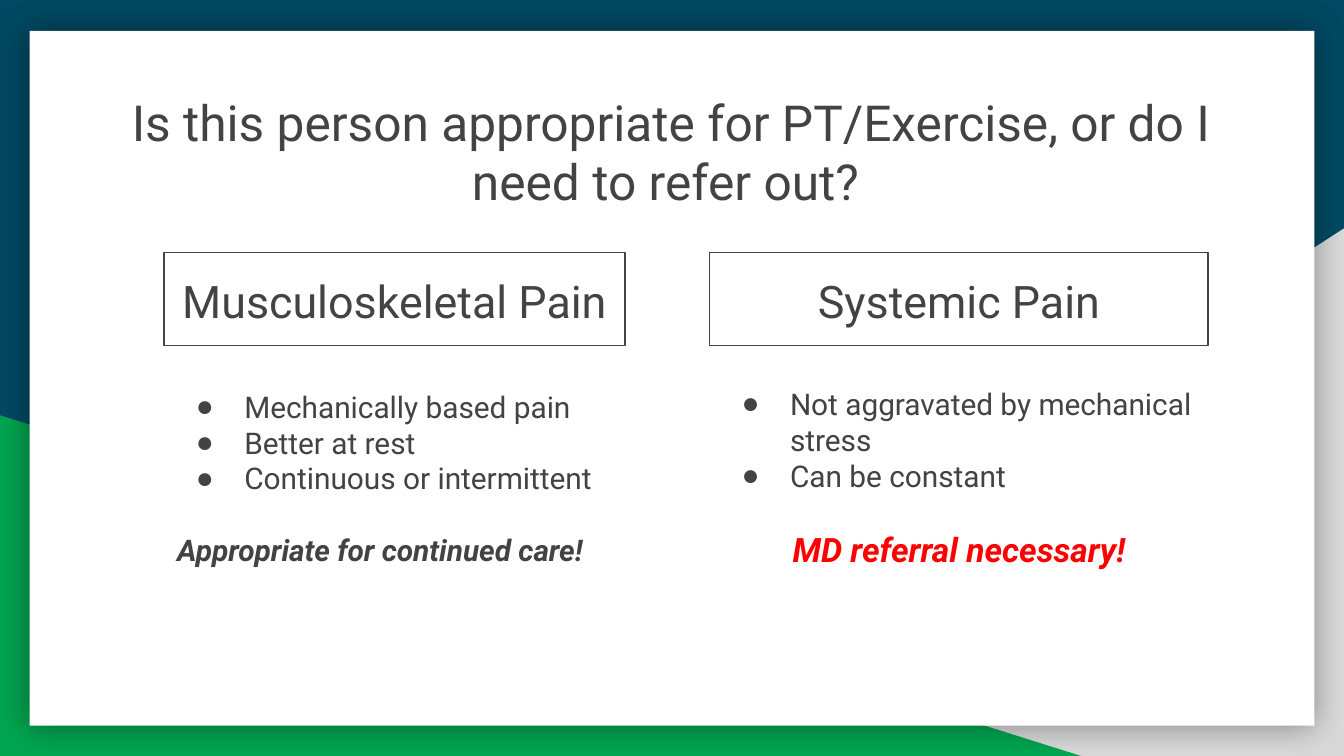
from lxml import etree
from pptx import Presentation
from pptx.dml.color import RGBColor
from pptx.enum.shapes import MSO_SHAPE as Shape
from pptx.enum.text import MSO_ANCHOR as Anchor, PP_ALIGN as Align
from pptx.oxml import parse_xml
from pptx.oxml.ns import nsdecls, qn
from pptx.util import Inches, Pt

NAVY = RGBColor(0x00, 0x49, 0x63)
GREEN = RGBColor(0x00, 0xA5, 0x50)
LIGHT_GRAY = RGBColor(0xD9, 0xD9, 0xD9)
DARK_GRAY = RGBColor(0x43, 0x43, 0x43)
WHITE = RGBColor(0xFF, 0xFF, 0xFF)
RED = RGBColor(0xFF, 0x00, 0x00)

SLIDE_WIDTH = 10
SLIDE_HEIGHT = SLIDE_WIDTH * 9 / 16
HEADER_TOP, HEADER_HEIGHT = 1.88, 0.69
CONCLUSION_GAP = Pt(19)

TITLE = "Is this person appropriate for PT/Exercise, or do I need to refer out? "
BODY = {"size": Pt(16)}
EMPHASIS = {"bold": True, "italic": True}

COLUMNS = [
    {
        "header": "Musculoskeletal Pain",
        "header_box": (1.22, HEADER_TOP, 3.43, HEADER_HEIGHT),
        "list_box": (1.22, 2.79, 3.67, 1.55),
        "points": ["Mechanically based pain", "Better at rest", "Continuous or intermittent"],
        "conclusion": "Appropriate for continued care!",
        "conclusion_align": Align.LEFT,
        "conclusion_font": {**BODY, **EMPHASIS},
        "conclusion_color": DARK_GRAY,
    },
    {
        "header": "Systemic Pain",
        "header_box": (5.28, HEADER_TOP, 3.71, HEADER_HEIGHT),
        "list_box": (5.28, 2.77, 3.71, 1.58),
        "points": ["Not aggravated by mechanical stress", "Can be constant"],
        "conclusion": "MD referral necessary!",
        "conclusion_align": Align.CENTER,
        "conclusion_font": {"size": Pt(18), **EMPHASIS},
        "conclusion_color": RED,
    },
]


def set_attributes(target, values):
    for name, value in values.items():
        setattr(target, name, value)


def add_block(slide, kind, box, fill):
    shape = slide.shapes.add_shape(kind, *map(Inches, box))
    shape.shadow.inherit = False
    shape.fill.solid()
    shape.fill.fore_color.rgb = fill
    shape.line.fill.background()
    return shape


def add_soft_shadow(shape):
    effects = shape._element.spPr.find(qn("a:effectLst"))
    effects.append(parse_xml(
        f'<a:outerShdw {nsdecls("a")} blurRad="{Pt(18)}" dist="0" dir="0" algn="ctr" '
        'rotWithShape="0"><a:srgbClr val="000000"><a:alpha val="40000"/></a:srgbClr>'
        '</a:outerShdw>'))


def add_text_box(slide, box):
    shape = slide.shapes.add_textbox(*map(Inches, box))
    margins = dict.fromkeys(
        ("margin_left", "margin_top", "margin_right", "margin_bottom"), Inches(0.1))
    set_attributes(shape.text_frame,
                   {"word_wrap": True, "vertical_anchor": Anchor.TOP, **margins})
    return shape


def write(paragraph, text, font, color=DARK_GRAY, **layout):
    run = paragraph.add_run()
    run.text = text
    set_attributes(run.font, {"name": "Roboto", **font})
    run.font.color.rgb = color
    set_attributes(paragraph, layout)


def add_bullet(paragraph):
    properties = paragraph._p.get_or_add_pPr()
    properties.set("marL", str(Inches(0.5)))
    properties.set("indent", str(Inches(-0.36)))
    color = etree.SubElement(properties, qn("a:buClr"))
    etree.SubElement(color, qn("a:srgbClr"), val=str(DARK_GRAY))
    etree.SubElement(properties, qn("a:buFont"), typeface="Arial")
    etree.SubElement(properties, qn("a:buChar"), char="●")


def add_backdrop(slide):
    slide.background.fill.solid()
    slide.background.fill.fore_color.rgb = NAVY
    gray_corner = add_block(slide, Shape.RIGHT_TRIANGLE, (3.92, 1.7, 6.08, 3.93), LIGHT_GRAY)
    gray_corner._element.spPr.xfrm.set("flipH", "1")
    add_block(slide, Shape.RIGHT_TRIANGLE, (0, 3.09, 8.06, 2.54), GREEN)
    card = add_block(slide, Shape.RECTANGLE, (0.22, 0.23, 9.56, 5.17), WHITE)
    add_soft_shadow(card)


def add_title(slide):
    frame = add_text_box(slide, (0.86, 0.58, 8.28, 1.51)).text_frame
    write(frame.paragraphs[0], TITLE, {"size": Pt(26.6)}, alignment=Align.CENTER)


def add_header(slide, column):
    shape = add_text_box(slide, column["header_box"])
    shape.line.color.rgb = DARK_GRAY
    shape.line.width = Pt(0.75)
    write(shape.text_frame.paragraphs[0], column["header"], {"size": Pt(24)},
          alignment=Align.CENTER, line_spacing=1.15, space_after=Pt(12))


def add_points(slide, column):
    """Add the bulleted signs of one kind of pain and the conclusion below them."""
    frame = add_text_box(slide, column["list_box"]).text_frame
    for index, point in enumerate(column["points"]):
        paragraph = frame.add_paragraph() if index else frame.paragraphs[0]
        add_bullet(paragraph)
        write(paragraph, point, BODY)
    write(frame.add_paragraph(), column["conclusion"], column["conclusion_font"],
          column["conclusion_color"], alignment=column["conclusion_align"],
          space_before=CONCLUSION_GAP)


def main():
    presentation = Presentation()
    presentation.slide_width = Inches(SLIDE_WIDTH)
    presentation.slide_height = Inches(SLIDE_HEIGHT)
    slide = presentation.slides.add_slide(presentation.slide_layouts[6])
    add_backdrop(slide)
    add_title(slide)
    for column in COLUMNS:
        add_header(slide, column)
        add_points(slide, column)
    presentation.save("out.pptx")


if __name__ == "__main__":
    main()
